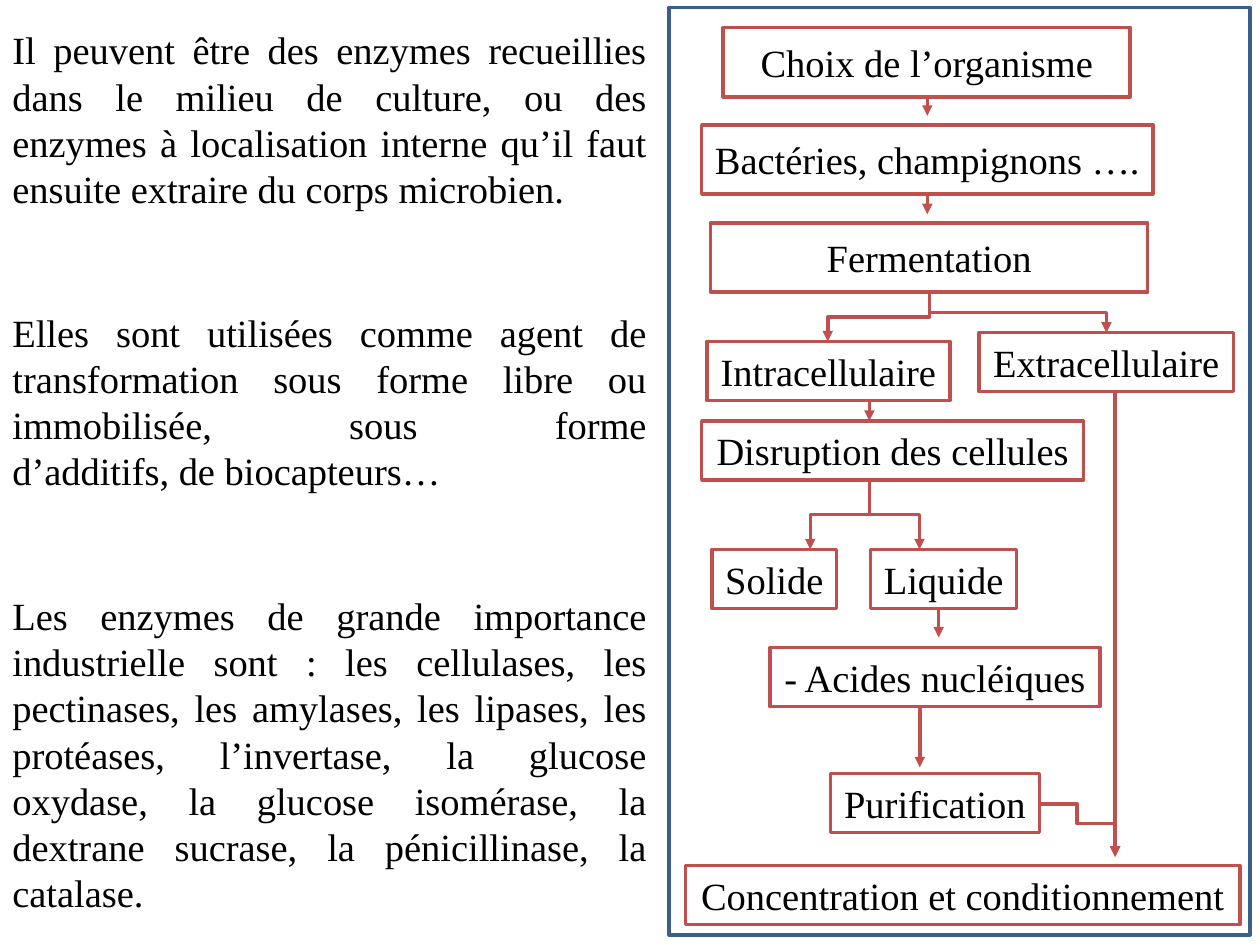
from dataclasses import dataclass

from lxml.etree import SubElement
from pptx import Presentation
from pptx.dml.color import RGBColor as RGB
from pptx.enum.shapes import MSO_CONNECTOR as CONN, MSO_SHAPE as SHAPE
from pptx.enum.text import MSO_ANCHOR as ANCHOR, PP_ALIGN as ALIGN
from pptx.oxml.ns import qn
from pptx.util import Pt


@dataclass(frozen=True)
class Theme:
    font: str = "Times New Roman"
    size: float = 22
    line: float = 2
    text: RGB = RGB(0x00, 0x00, 0x00)
    fill: RGB = RGB(0xFF, 0xFF, 0xFF)
    accent: RGB = RGB(0xC0, 0x50, 0x4D)
    frame: RGB = RGB(0x3A, 0x5F, 0x8C)


def apply(obj, fmt):
    for name, value in fmt.items():
        setattr(obj, name, value)


class Canvas:
    """Holds the theme and the current slide; draws each kind of element."""

    def __init__(self, slide, theme):
        self.s, self.t = slide, theme

    def put_text(self, tf, text, align, **frame_fmt):
        apply(tf, frame_fmt)
        p = tf.paragraphs[0]
        p.text = text
        p.alignment = align
        for r in p.runs:
            apply(r.font, {"name": self.t.font, "size": Pt(self.t.size)})
            r.font.color.rgb = self.t.text

    def outline(self, line, color):
        line.color.rgb = color
        line.width = Pt(self.t.line)

    def paragraph(self, text, x, y, w, h):
        sp = self.s.shapes.add_textbox(Pt(x), Pt(y), Pt(w), Pt(h))
        self.put_text(sp.text_frame, text, ALIGN.JUSTIFY, word_wrap=True)

    def rect(self, x, y, w, h, color):
        sp = self.s.shapes.add_shape(SHAPE.RECTANGLE, Pt(x), Pt(y), Pt(w), Pt(h))
        sp.shadow.inherit = False
        self.outline(sp.line, color)
        return sp

    def frame(self, x, y, w, h):
        self.rect(x, y, w, h, self.t.frame).fill.background()

    def step(self, text, x, y, w, h):
        sp = self.rect(x, y, w, h, self.t.accent)
        sp.fill.solid()
        sp.fill.fore_color.rgb = self.t.fill
        self.put_text(sp.text_frame, text, ALIGN.CENTER,
                      word_wrap=False, vertical_anchor=ANCHOR.MIDDLE)

    def arrow(self, x1, y1, x2, y2, kind=CONN.STRAIGHT):
        cx = self.s.shapes.add_connector(kind, Pt(x1), Pt(y1), Pt(x2), Pt(y2))
        self.outline(cx.line, self.t.accent)
        SubElement(cx.get_or_add_ln(), qn("a:tailEnd"), type="triangle")
        SubElement(cx.element.spPr, qn("a:effectLst"))
        return cx

    def branch(self, x1, y1, x2, y2):
        """Elbow that leaves downwards: a flat elbow turned a quarter."""
        mx, my = (x1 + x2) / 2, (y1 + y2) / 2
        dx, dy = abs(x2 - x1) / 2, (y2 - y1) / 2
        right = x2 > x1
        side = dy if right else -dy
        cx = self.arrow(mx + side, my - dx, mx - side, my + dx, CONN.ELBOW)
        cx.element.spPr.find(qn("a:xfrm")).set("rot", str((270 if right else 90) * 60000))

    def join(self, x1, y1, x2, y2, adjustments):
        """Elbow that leaves sideways and arrives downwards."""
        cx = self.arrow(x1, y1, x2, y2, CONN.ELBOW)
        geom = cx.element.spPr.find(qn("a:prstGeom"))
        geom.set("prst", "bentConnector4")
        av = geom.find(qn("a:avLst"))
        if av is None:
            av = SubElement(geom, qn("a:avLst"))
        for i, share in enumerate(adjustments, 1):
            SubElement(av, qn("a:gd"), name=f"adj{i}", fmla=f"val {round(share * 100000)}")


TALL, LOW = 39.6, 33.8  # step heights
FERMENT, INTRA, EXTRA, DISRUPT, PHASES = 127.4, 195.1, 190.1, 240.5, 313.9  # step tops

# text, top, height
PARAGRAPHS = [
    ("Il peuvent être des enzymes recueillies dans le milieu de culture, ou des "
     "enzymes à localisation interne qu’il faut ensuite extraire du corps microbien.",
     11.5, 113.8),
    ("Elles sont utilisées comme agent de transformation sous forme libre ou "
     "immobilisée, sous forme\nd’additifs, de biocapteurs…", 172.8, 113.8),
    ("Les enzymes de grande importance industrielle sont : les cellulases, les "
     "pectinases, les amylases, les lipases, les protéases, l’invertase, la glucose "
     "oxydase, la glucose isomérase, la dextrane sucrase, la pénicillinase, la "
     "catalase.", 334.8, 193.7),
]

# text, left, top, width, height
STEPS = [
    ("Choix de l’organisme", 413.3, 15.8, 232.6, TALL),
    ("Bactéries, champignons ….", 401, 71.3, 257.8, TALL),
    ("Fermentation", 406.1, FERMENT, 249.8, TALL),
    ("Intracellulaire", 403.9, INTRA, 139, LOW),
    ("Extracellulaire", 559.4, EXTRA, 145.4, LOW),
    ("Disruption des cellules", 401, DISRUPT, 218.2, LOW),
    ("Solide", 406.8, PHASES, 71.3, LOW),
    ("Liquide", 497.5, PHASES, 83.5, LOW),
    ("- Acides nucléiques", 439.9, 370.1, 188.6, LOW),
    ("Purification", 474.5, 442.1, 119.5, LOW),
    ("Concentration et conditionnement", 391.7, 494.6, 316.8, LOW),
]

# x, start, end
DOWN_ARROWS = [
    (529.9, 38.2, 66.2),
    (529.9, 94.3, 122.4),
    (496.8, 206.6, DISRUPT),
    (536.4, 330.5, 364.3),
    (525.6, 393.1, 438.5),
    (637.2, EXTRA + LOW, 489.6),
]

# x and y of the start, x and y of the end
BRANCHES = [
    (531.2, FERMENT + TALL, 632.2, EXTRA),
    (531.2, FERMENT + TALL, 473, INTRA),
    (496.8, DISRUPT + LOW, 525.4, PHASES),
    (496.8, DISRUPT + LOW, 463, PHASES),
]


def main():
    prs = Presentation()
    apply(prs, {"slide_width": Pt(720), "slide_height": Pt(540)})
    c = Canvas(prs.slides.add_slide(prs.slide_layouts[6]), Theme())

    # Left column of text
    for text, top, height in PARAGRAPHS:
        c.paragraph(text, 0, top, 376.6, height)

    # Flow chart: straight arrows start behind their steps
    for x, start, end in DOWN_ARROWS:
        c.arrow(x, start, x, end)
    for step in STEPS:
        c.step(*step)
    for branch in BRANCHES:
        c.branch(*branch)
    c.join(594, 459.4, 637.2, 489.6, (0.5, 0.37))

    # Border of the flow chart
    c.frame(382.3, 4.3, 331.9, 529.9)

    prs.save("out.pptx")


if __name__ == "__main__":
    main()
